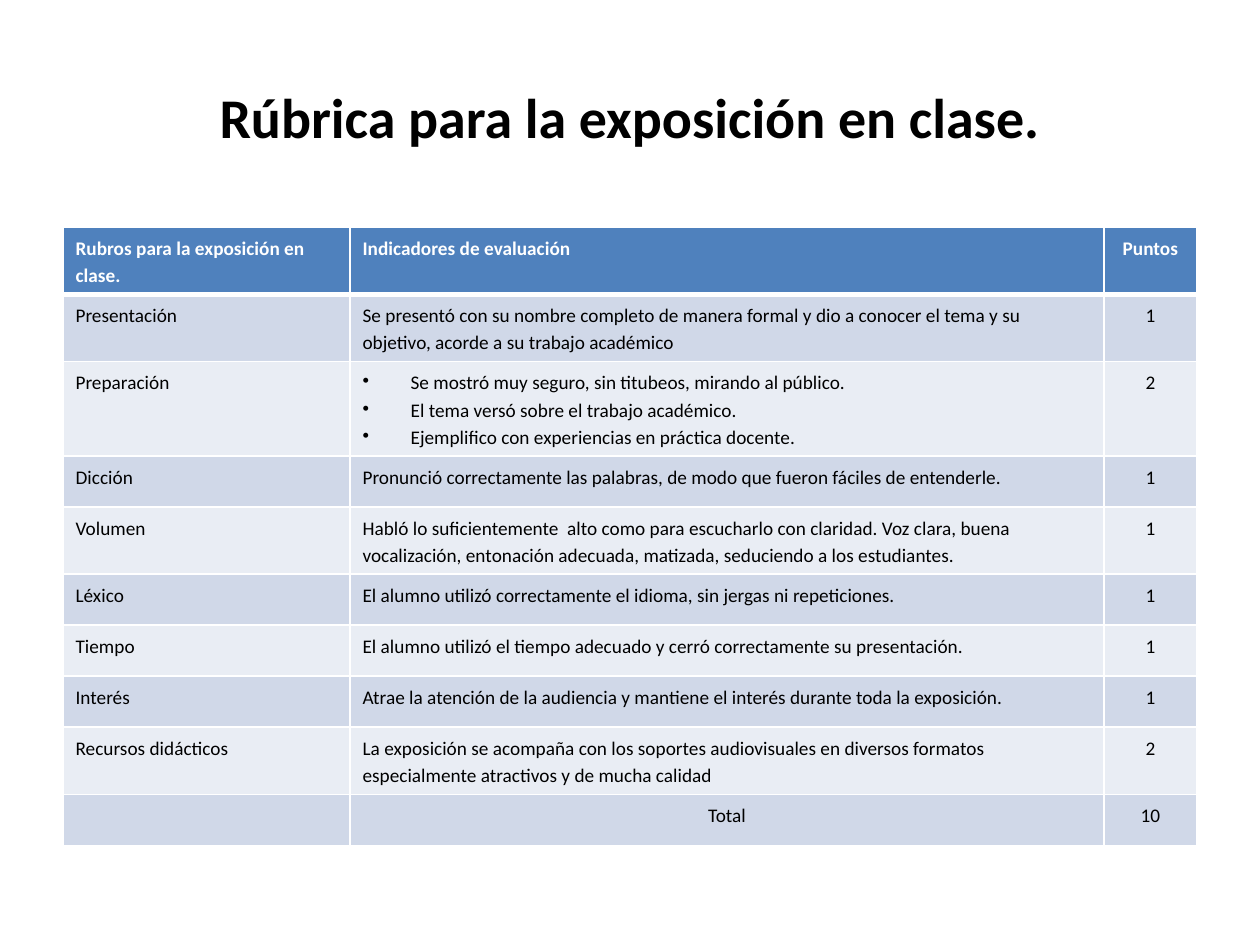
from lxml.etree import SubElement
from pptx import Presentation
from pptx.dml.color import RGBColor
from pptx.enum.text import MSO_ANCHOR as Anchor, PP_ALIGN as Align
from pptx.oxml.ns import qn
from pptx.util import Pt


def px(n):
    return n * 914400 // 126


def rgb(code):
    return RGBColor.from_string(code)


rows = [
    ("Rubros para la exposición en clase.", "Indicadores de evaluación", "Puntos"),
    ("Presentación", "Se presentó con su nombre completo de manera formal y dio a conocer el tema y su objetivo, acorde a su trabajo académico", "1"),
    ("Preparación", "Se mostró muy seguro, sin titubeos, mirando al público.\nEl tema versó sobre el trabajo académico.\nEjemplifico con experiencias en práctica docente.", "2"),
    ("Dicción", "Pronunció correctamente las palabras, de modo que fueron fáciles de entenderle.", "1"),
    ("Volumen", "Habló lo suficientemente  alto como para escucharlo con claridad. Voz clara, buena vocalización, entonación adecuada, matizada, seduciendo a los estudiantes.", "1"),
    ("Léxico", "El alumno utilizó correctamente el idioma, sin jergas ni repeticiones.", "1"),
    ("Tiempo", "El alumno utilizó el tiempo adecuado y cerró correctamente su presentación.", "1"),
    ("Interés", "Atrae la atención de la audiencia y mantiene el interés durante toda la exposición.", "1"),
    ("Recursos didácticos", "La exposición se acompaña con los soportes audiovisuales en diversos formatos especialmente atractivos y de mucha calidad", "2"),
    ("", "Total", "10"),
]
widths = [287, 754, 93]
high = 51

deck = Presentation()
deck.slide_width, deck.slide_height = px(1260), px(945)
slide = deck.slides.add_slide(deck.slide_layouts[5])

title = slide.shapes.title
title.left, title.top, title.width, title.height = px(63), px(38), px(1134), px(157)
frame = title.text_frame
frame.text = "Rúbrica para la exposición en clase."
frame.vertical_anchor = Anchor.MIDDLE
para = frame.paragraphs[0]
para.alignment = Align.CENTER
para.font.name, para.font.size, para.font.bold = "Calibri", Pt(32), True
para.font.color.rgb = rgb("000000")

table = slide.shapes.add_table(
    len(rows), len(widths), px(63), px(227), px(sum(widths)), px(high * len(rows))
).table
for col, width in zip(table.columns, widths):
    col.width = px(width)

for r, texts in enumerate(rows):
    table.rows[r].height = px(high)
    head = r == 0
    fill = "4F81BD" if head else ("E9EDF4", "D0D8E8")[r % 2]
    for c, text in enumerate(texts):
        cell = table.cell(r, c)
        cell.text = text
        props = cell._tc.get_or_add_tcPr()
        for side in ("lnL", "lnR", "lnT", "lnB"):
            thick = (head and side == "lnB") or (r == 1 and side == "lnT")
            line = SubElement(props, qn(f"a:{side}"), w=str(Pt(3 if thick else 1)))
            paint = SubElement(line, qn("a:solidFill"))
            SubElement(paint, qn("a:srgbClr"), val="FFFFFF")
        cell.fill.solid()
        cell.fill.fore_color.rgb = rgb(fill)
        paras = cell.text_frame.paragraphs
        for para in paras:
            para.alignment = Align.CENTER if c == 2 or text == "Total" else Align.LEFT
            para.line_spacing = 1.15
            para.font.name, para.font.size, para.font.bold = "Calibri", Pt(11), head
            para.font.color.rgb = rgb("FFFFFF" if head else "000000")
            if len(paras) == 1:
                para.space_after = Pt(10)
            else:
                form = para._p.get_or_add_pPr()
                form.set("marL", str(px(48)))
                form.set("indent", str(-px(48)))
                bullet = form.makeelement(qn("a:buChar"), {"char": "•"})
                form.find(qn("a:defRPr")).addprevious(bullet)

deck.save("out.pptx")
